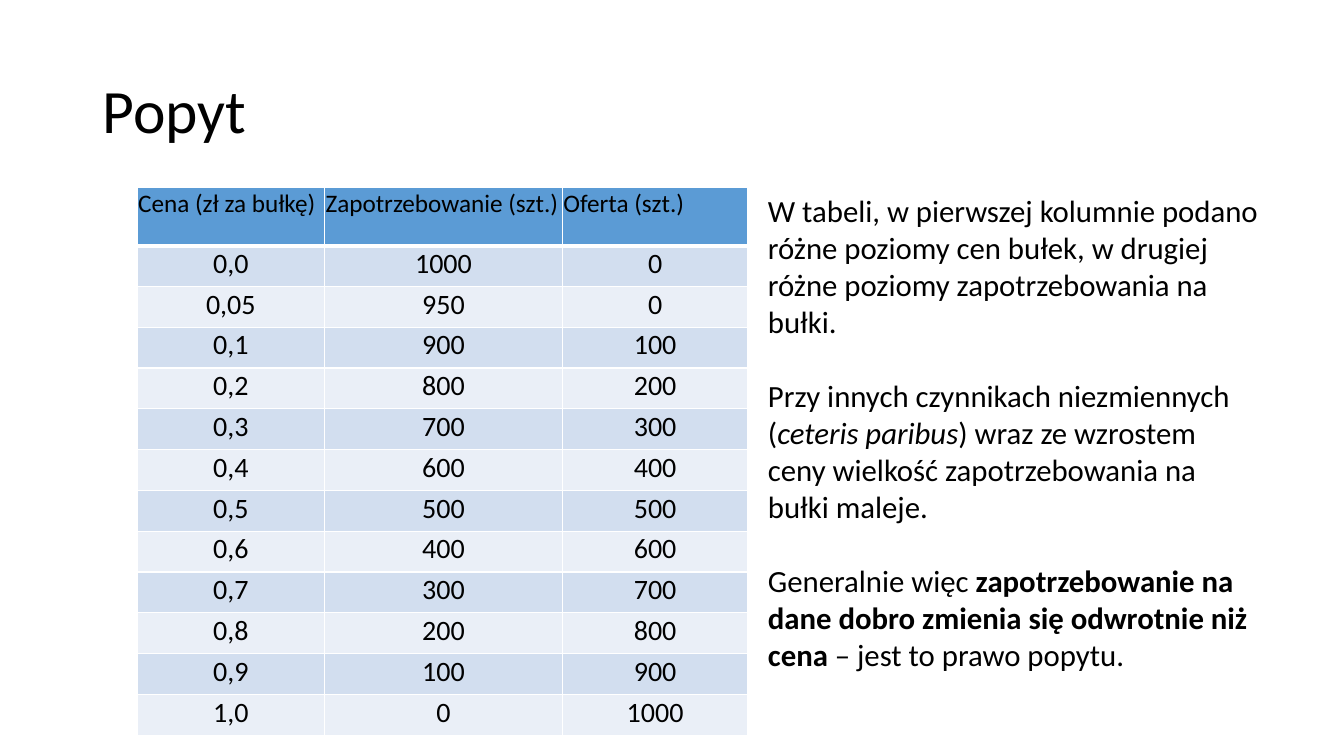
from lxml.etree import SubElement
from pptx import Presentation
from pptx.dml.color import RGBColor
from pptx.enum.text import MSO_ANCHOR as Anchor, PP_ALIGN as Align
from pptx.oxml.ns import qn
from pptx.util import Inches, Pt

BLACK = RGBColor(0x00, 0x00, 0x00)
WHITE = RGBColor(0xFF, 0xFF, 0xFF)
HEADER_BLUE = RGBColor(0x5B, 0x9B, 0xD5)
BAND_DARK = RGBColor(0xD2, 0xDE, 0xEF)
BAND_LIGHT = RGBColor(0xEA, 0xEF, 0xF7)

HEADINGS = ("Cena (zł za bułkę)", "Zapotrzebowanie (szt.)", "Oferta (szt.)")
MARKET = (
    ("0,0", 1000, 0),
    ("0,05", 950, 0),
    ("0,1", 900, 100),
    ("0,2", 800, 200),
    ("0,3", 700, 300),
    ("0,4", 600, 400),
    ("0,5", 500, 500),
    ("0,6", 400, 600),
    ("0,7", 300, 700),
    ("0,8", 200, 800),
    ("0,9", 100, 900),
    ("1,0", 0, 1000),
)
EXPLANATION = (
    (("W tabeli, w pierwszej kolumnie podano różne poziomy cen bułek, "
      "w drugiej różne poziomy zapotrzebowania na bułki.", {}),),
    (("Przy innych czynnikach niezmiennych (", {}),
     ("ceteris paribus", {"italic": True}),
     (") wraz ze wzrostem ceny wielkość zapotrzebowania na bułki maleje.", {})),
    (("Generalnie więc ", {}),
     ("zapotrzebowanie na dane dobro zmienia się odwrotnie niż cena ", {"bold": True}),
     ("– jest to prawo popytu.", {})),
)


def write(para, text, size, bold=False, italic=False, align=Align.LEFT):
    """Add a formatted span of text to a paragraph."""
    para.alignment = align
    span = para.add_run()
    span.text = text
    font = span.font
    font.name, font.size = "Calibri", Pt(size)
    font.bold, font.italic = bold, italic
    font.color.rgb = BLACK


def draw_borders(cell, bottom):
    """Give a cell white borders with the bottom width in points."""
    properties = cell._tc.get_or_add_tcPr()
    for side, width in (("L", 1), ("R", 1), ("T", 1), ("B", bottom)):
        line = SubElement(properties, qn(f"a:ln{side}"), w=str(Pt(width)))
        fill = SubElement(line, qn("a:solidFill"))
        SubElement(fill, qn("a:srgbClr"), val=str(WHITE))


class SlideBuilder:
    """Place elements on a slide, with lengths in percent of its size."""

    def __init__(self, deck):
        """Add a blank white slide to the deck."""
        self.deck = deck
        self.slide = deck.slides.add_slide(deck.slide_layouts[6])
        background = self.slide.background.fill
        background.solid()
        background.fore_color.rgb = WHITE

    def across(self, share):
        """Turn a percentage of the slide width into a length."""
        return round(self.deck.slide_width * share / 100)

    def down(self, share):
        """Turn a percentage of the slide height into a length."""
        return round(self.deck.slide_height * share / 100)

    def text(self, left, top, width, height, paragraphs, size,
             anchor=Anchor.TOP, line_spacing=1.0, gap=0):
        """Add a wrapped text box made of paragraphs of spans."""
        box = self.slide.shapes.add_textbox(
            self.across(left), self.down(top), self.across(width), self.down(height))
        frame = box.text_frame
        frame.word_wrap = True
        frame.vertical_anchor = anchor
        for index, spans in enumerate(paragraphs):
            para = frame.add_paragraph() if index else frame.paragraphs[0]
            para.line_spacing = line_spacing
            para.space_before = Pt(gap if index else 0)
            for content, style in spans:
                write(para, content, size, **style)

    def table(self, left, top, columns, header_height, row_height, headings, records):
        """Add a banded table with a header row."""
        rows = (headings, *records)
        heights = [header_height] + [row_height] * len(records)
        table = self.slide.shapes.add_table(
            len(rows), len(columns), self.across(left), self.down(top),
            self.across(sum(columns)), self.down(sum(heights))).table
        for column, width in zip(table.columns, columns):
            column.width = self.across(width)
        for row, height in zip(table.rows, heights):
            row.height = self.down(height)
        for index, values in enumerate(rows):
            band = BAND_DARK if index % 2 else BAND_LIGHT
            for cell, value in zip(table.rows[index].cells, values):
                self.cell(cell, str(value), index == 0, band)

    def cell(self, cell, value, is_header, band):
        """Fill one table cell."""
        cell.margin_left = cell.margin_right = cell.margin_top = Inches(0.01)
        cell.margin_bottom = 0
        draw_borders(cell, bottom=3 if is_header else 1)
        cell.fill.solid()
        cell.fill.fore_color.rgb = HEADER_BLUE if is_header else band
        write(cell.text_frame.paragraphs[0], value, size=18 if is_header else 20,
              align=Align.LEFT if is_header else Align.CENTER)


def main():
    """Build the demand slide and save it."""
    deck = Presentation()
    deck.slide_width, deck.slide_height = Inches(13.33), Inches(7.5)
    page = SlideBuilder(deck)
    page.text(6.9, 5.33, 86.25, 19.33, ((("Popyt", {}),),), size=44,
              anchor=Anchor.MIDDLE, line_spacing=0.9)
    page.table(10.2, 24.8, columns=(13.95, 17.7, 13.8), header_height=7.7,
               row_height=5.4, headings=HEADINGS, records=MARKET)
    page.text(56.4, 24.67, 38.05, 65.6, EXPLANATION, size=22, gap=26.8)
    deck.save("out.pptx")


if __name__ == "__main__":
    main()
